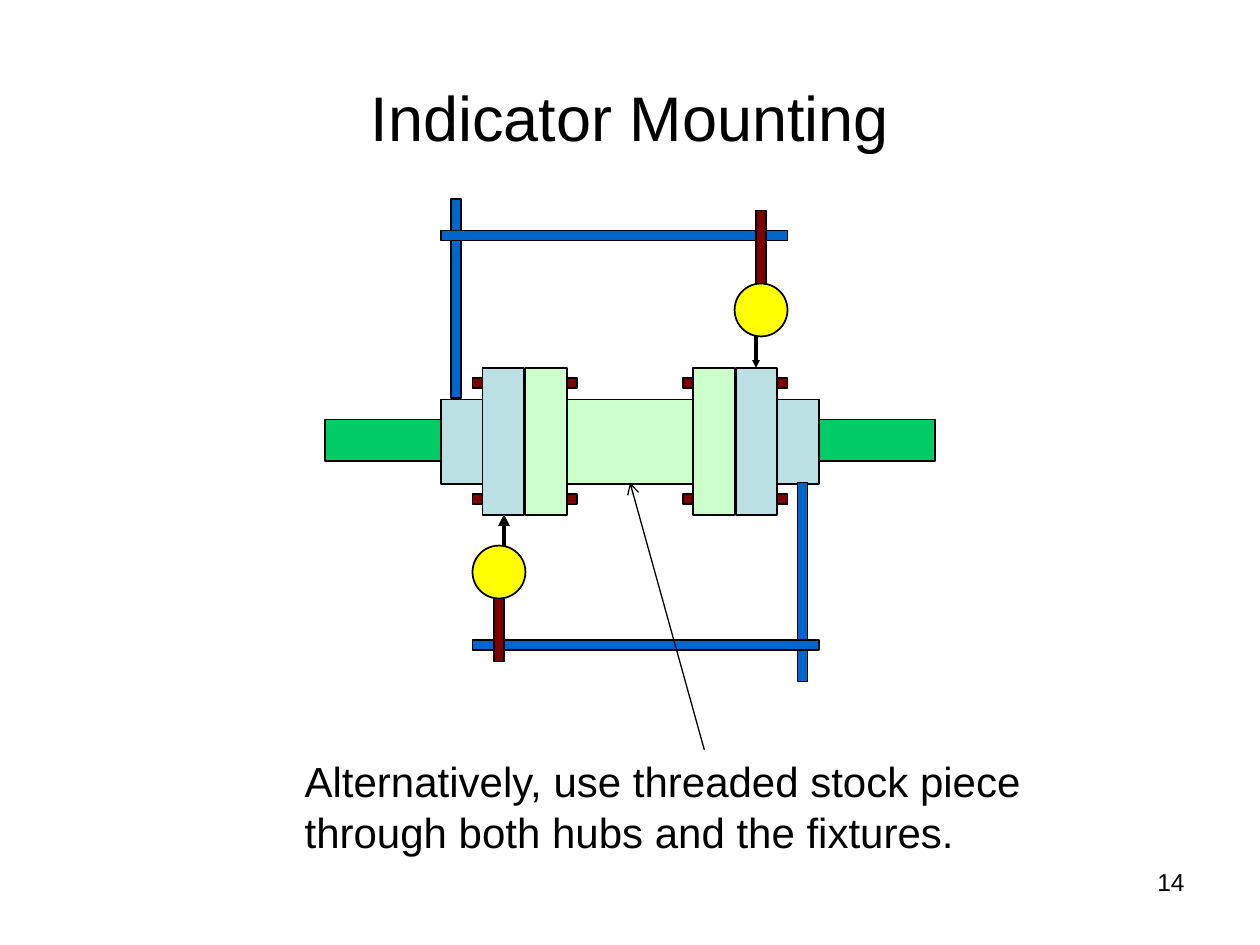
from typing import NamedTuple, Optional
from itertools import product

from lxml.etree import SubElement
from pptx import Presentation
from pptx.dml.color import RGBColor
from pptx.enum.shapes import MSO_CONNECTOR, MSO_SHAPE
from pptx.enum.text import MSO_ANCHOR, PP_ALIGN
from pptx.oxml.ns import qn
from pptx.util import Inches, Pt

BLACK, HUB, SPACER, SHAFT = "000000", "BBE0E3", "CCFFCC", "00CC66"
MAROON, BLUE, YELLOW = "800000", "0066CC", "FFFF00"
THIN = 0.08


class Part(NamedTuple):
    left: float
    top: float
    width: float
    height: float
    fill: str
    shape: MSO_SHAPE = MSO_SHAPE.RECTANGLE


class Arrow(NamedTuple):
    """An arrow with its head at the end point."""
    x1: float
    y1: float
    x2: float
    y2: float
    weight: float
    head: str
    size: str = "med"


def rgb(color: str) -> RGBColor:
    return RGBColor.from_string(color)


def mirrored(part: Part) -> Part:
    """The same part reflected in the centre line of the coupling."""
    return part._replace(left=10 - part.left - part.width)


def draw_part(slide, part: Part) -> None:
    sp = slide.shapes.add_shape(part.shape, *map(Inches, part[:4]))
    sp.shadow.inherit = False
    sp.fill.solid()
    sp.fill.fore_color.rgb = rgb(part.fill)
    sp.line.color.rgb = rgb(BLACK)
    sp.line.width = Pt(1)


def draw_arrow(slide, arrow: Arrow) -> None:
    line = slide.shapes.add_connector(MSO_CONNECTOR.STRAIGHT, *map(Inches, arrow[:4]))
    line.line.color.rgb = rgb(BLACK)
    line.line.width = Pt(arrow.weight)
    sp_pr = line._element.spPr
    SubElement(sp_pr.find(qn("a:ln")), qn("a:tailEnd"),
               type=arrow.head, w=arrow.size, len=arrow.size)
    SubElement(sp_pr, qn("a:effectLst"))


def write(tf, text: str, size: int, align: Optional[PP_ALIGN] = None,
          anchor: MSO_ANCHOR = MSO_ANCHOR.TOP) -> None:
    tf.word_wrap = True
    tf.vertical_anchor = anchor
    p = tf.paragraphs[0]
    p.alignment = align
    r = p.add_run()
    r.text = text
    r.font.size = Pt(size)
    r.font.name = "Arial"
    r.font.color.rgb = rgb(BLACK)


def add_text(slide, box: tuple, text: str, size: int,
             align: PP_ALIGN = PP_ALIGN.LEFT) -> None:
    write(slide.shapes.add_textbox(*map(Inches, box)).text_frame, text, size, align)


LEFT_HALF = [
    Part(3.83, 2.92, 0.33, 1.17, HUB),
    Part(3.5, 3.17, 0.33, 0.67, HUB),
    Part(4.17, 2.92, 0.33, 1.17, SPACER),
    Part(2.58, 3.33, 0.92, 0.33, SHAFT),
    *(Part(x, y, THIN, THIN, MAROON) for x, y in product((3.75, 4.5), (3, 3.92))),
]
SPACER_TUBE = Part(4.5, 3.17, 1, 0.67, SPACER)
UPPER_FIXTURE = [
    Part(3.58, 1.58, THIN, 1.58, BLUE),
    Part(3.5, 1.83, 2.75, THIN, BLUE),
    Part(5.83, 2.25, 0.42, 0.42, YELLOW, MSO_SHAPE.OVAL),
    Part(6, 1.67, THIN, 0.58, MAROON),
]
LOWER_FIXTURE = [
    Part(6.33, 3.83, THIN, 1.58, BLUE),
    Part(3.75, 5.08, 2.75, THIN, BLUE),
    Part(3.75, 4.33, 0.42, 0.42, YELLOW, MSO_SHAPE.OVAL),
    Part(3.92, 4.75, THIN, 0.5, MAROON),
]
ARROWS = [
    Arrow(6, 2.67, 6, 2.92, 2.25, "triangle", "sm"),
    Arrow(4, 4.33, 4, 4.08, 2.25, "triangle"),
    Arrow(5.59, 5.95, 5, 3.83, 0.75, "arrow"),
]


def main() -> None:
    prs = Presentation()
    prs.slide_width, prs.slide_height = Inches(10), Inches(7.5)
    slide = prs.slides.add_slide(prs.slide_layouts[5])

    title = slide.shapes.title
    title.left, title.top, title.width, title.height = map(Inches, (0.5, 0.3, 9, 1.25))
    write(title.text_frame, "Indicator Mounting", 36, PP_ALIGN.CENTER, MSO_ANCHOR.MIDDLE)
    add_text(slide, (7.17, 6.83, 2.33, 0.52), "14", 14, PP_ALIGN.RIGHT)

    coupling = [*LEFT_HALF, *map(mirrored, LEFT_HALF), SPACER_TUBE]
    # The tube goes first so that the bolts stay in front of it.
    coupling.insert(0, coupling.pop())
    for part in coupling + UPPER_FIXTURE + LOWER_FIXTURE:
        draw_part(slide, part)
    for arrow in ARROWS:
        draw_arrow(slide, arrow)

    add_text(slide, (2.32, 5.95, 6.54, 0.91),
             "Alternatively, use threaded stock piece through both hubs and the fixtures.", 24)
    prs.save("out.pptx")


if __name__ == "__main__":
    main()
